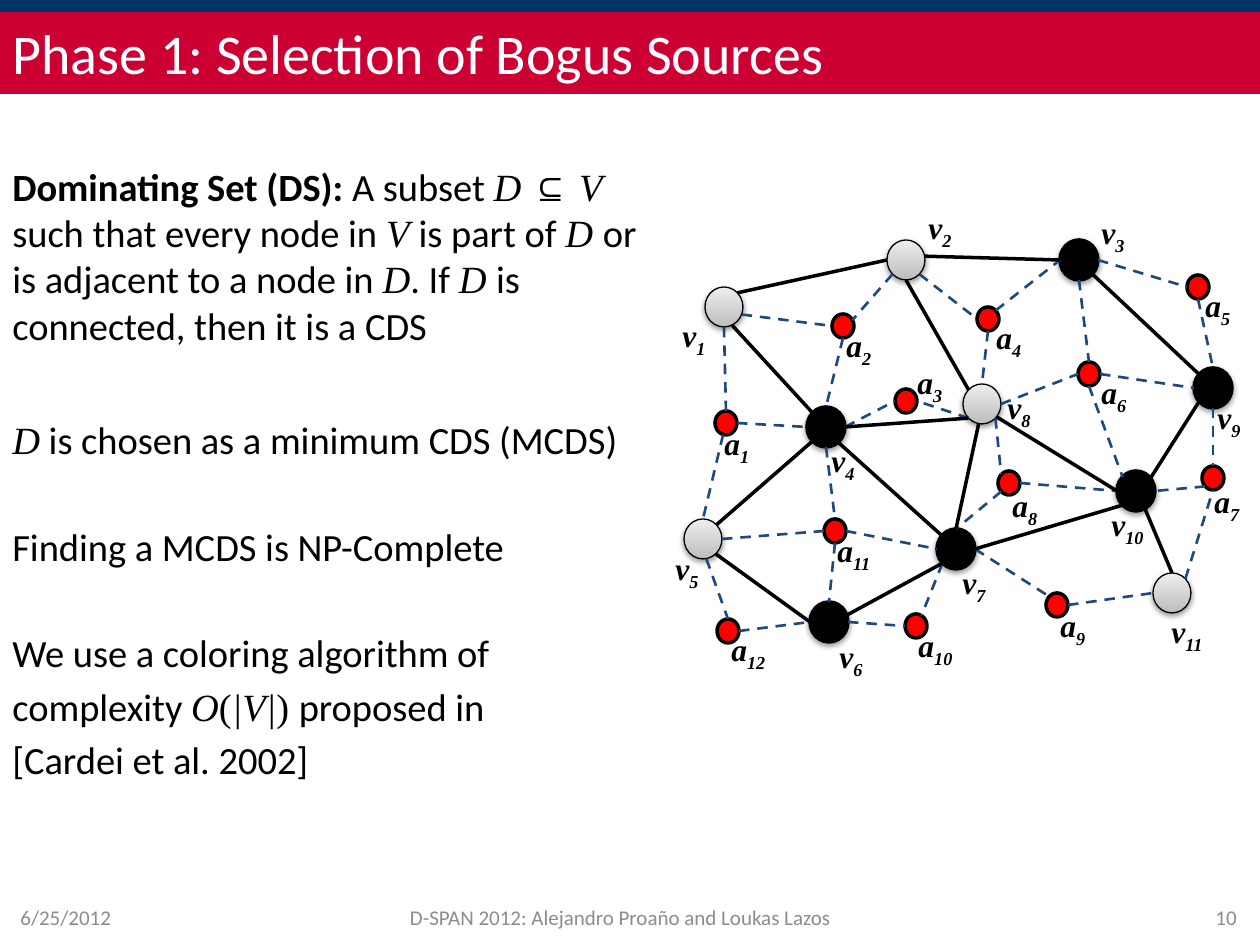
from math import cos, radians, sin

from lxml.etree import SubElement
from pptx import Presentation
from pptx.dml.color import RGBColor
from pptx.enum.dml import MSO_LINE
from pptx.enum.shapes import MSO_CONNECTOR, MSO_SHAPE
from pptx.enum.text import MSO_ANCHOR, MSO_AUTO_SIZE, PP_ALIGN
from pptx.oxml.ns import qn
from pptx.util import Emu, Pt

SCALE = 914400 / 126  # EMU in one px
COLORS = {"navy": "003366", "crimson": "CC0033", "white": "FFFFFF", "black": "000000",
          "footer": "8C8C8C", "red": "FF0000", "dash": "1F497D",
          "grey_low": "BDBDBD", "grey_high": "EEEEEE"}
SANS, SERIF = "Calibri", "Times New Roman"
RADII = {"v": (19, 20), "a": (11, 12)}

# Node: centre x, centre y, label left, label top
NODES = {
    "v1": (724, 307, 670, 310), "v2": (906, 260, 916, 202), "v3": (1079, 260, 1089, 207),
    "v4": (826, 427, 819, 435), "v5": (703, 539, 663, 543), "v6": (829, 622, 827, 631),
    "v7": (956, 549, 950, 557), "v8": (982, 404, 995, 382), "v9": (1213, 388, 1205, 392),
    "v10": (1136, 491, 1099, 499), "v11": (1172, 593, 1159, 606),
    "a1": (726, 423, 712, 418), "a2": (843, 326, 834, 320), "a3": (906, 401, 905, 357),
    "a4": (988, 319, 984, 312), "a5": (1198, 287, 1193, 280), "a6": (1089, 374, 1089, 367),
    "a7": (1213, 478, 1202, 476), "a8": (1009, 483, 1000, 480), "a9": (1057, 605, 1048, 600),
    "a10": (916, 626, 906, 620), "a11": (835, 531, 825, 525), "a12": (728, 631, 719, 624),
}
DOMINATING = {"v3", "v4", "v6", "v7", "v9", "v10"}

# Edge: node and clockwise angle on its rim, at both ends
SENSOR_EDGES = [
    ("a5", 90, "v9", 270), ("v3", 0, "a5", 180), ("a4", 90, "v8", 270), ("a8", 0, "v10", 180),
    ("a6", 0, "v9", 180), ("v3", 90, "a6", 270), ("a7", 135, "v10", 0), ("v9", 90, "a7", 270),
    ("v7", 135, "a10", 300), ("v6", 0, "a10", 180), ("v8", 0, "a6", 180), ("a4", 315, "v3", 180),
    ("v2", 45, "a4", 180), ("a9", 0, "v11", 180), ("v7", 0, "a9", 225), ("a2", 90, "v4", 270),
    ("v4", 0, "a3", 180), ("v8", 135, "a3", 0), ("a8", 135, "v7", 270), ("v8", 45, "a8", 225),
    ("a1", 0, "v4", 180), ("a1", 105, "v5", 270), ("v1", 90, "a1", 270), ("v2", 135, "a2", 330),
    ("v1", 22, "a2", 180), ("a11", 0, "v7", 180), ("a11", 90, "v6", 270), ("v5", 0, "a11", 180),
    ("v5", 80, "a12", 270), ("v4", 90, "a11", 270), ("a6", 90, "v10", 225), ("a12", 0, "v6", 180),
    ("v11", 315, "a7", 90),
]
BACKBONE_EDGES = [
    ("v1", 315, "v2", 180), ("v1", 65, "v4", 225), ("v5", 315, "v4", 135), ("v5", 48, "v6", 180),
    ("v2", 349, "v3", 180), ("v4", 0, "v8", 135), ("v2", 90, "v8", 225), ("v8", 40, "v10", 180),
    ("v6", 340, "v7", 135), ("v7", 0, "v10", 135), ("v10", 62, "v11", 270),
    ("v10", 320, "v9", 137), ("v3", 45, "v9", 223), ("v7", 270, "v8", 100),
    ("v4", 50, "v7", 222),
]

# Paragraph: space before in points, then runs of (text, style); b bold, m math, i italic
DEFINITIONS = [
    (0, [("Dominating Set (DS):", "b"), (" A subset ", ""), ("D ", "mi"), ("⊆", "m"),
         (" V ", "mi"), ("such that every node in ", ""), ("V ", "mi"), ("is part of ", ""),
         ("D ", "mi"), ("or is adjacent to a node in ", ""), ("D", "mi"), (". If ", ""),
         ("D ", "mi"), ("is connected, then it is a CDS", "")]),
    (39, [("D", "mi"), (" is chosen as a minimum CDS (MCDS)", "")]),
    (34.6, [("Finding a MCDS is NP-Complete", "")]),
    (34.6, [("We use a coloring algorithm of", "")]),
    (4, [("complexity ", ""), ("O", "mi"), ("(", "m"), ("|V|", "mi"), (") ", "m"),
         ("proposed in", "")]),
    (4, [("[Cardei et al. 2002]", "")]),
]


def px(value):
    return Emu(round(value * SCALE))


def rgb(name):
    return RGBColor.from_string(COLORS[name])


def rim(node, angle):
    """Point on the outline of a node."""
    x, y = NODES[node][:2]
    rx, ry = RADII[node[0]]
    return x + rx * cos(radians(angle)), y + ry * sin(radians(angle))


class SlideBuilder:
    def __init__(self, slide):
        self.slide = slide

    def title(self, text, box, fill):
        title = self.slide.shapes.title
        title.left, title.top, title.width, title.height = map(px, box)
        title.fill.solid()
        title.fill.fore_color.rgb = rgb(fill)
        frame = title.text_frame
        frame.auto_size = MSO_AUTO_SIZE.NONE
        frame.vertical_anchor = MSO_ANCHOR.MIDDLE
        frame.paragraphs[0].alignment = PP_ALIGN.LEFT
        self.run(frame.paragraphs[0], text, 32, color="white")

    def shape(self, kind, box, fill, line, width):
        shape = self.slide.shapes.add_shape(kind, *map(px, box))
        shape.shadow.inherit = False
        shape.line.color.rgb = rgb(line)
        shape.line.width = Pt(width)
        if fill:
            shape.fill.solid()
            shape.fill.fore_color.rgb = rgb(fill)
        else:
            shape.fill.gradient()
            shape.fill.gradient_angle = 90
            for stop, color in zip(shape.fill.gradient_stops, ("grey_low", "grey_high")):
                stop.color.rgb = rgb(color)
        return shape

    def node(self, name):
        x, y = NODES[name][:2]
        rx, ry = RADII[name[0]]
        fill = "red" if name[0] == "a" else "black" if name in DOMINATING else None
        ellipse = self.shape(MSO_SHAPE.OVAL, (x - rx, y - ry, 2 * rx, 2 * ry),
                             fill, "black", 2 if fill else 0.75)
        if name[0] == "v":
            effects = ellipse._element.spPr.find(qn("a:effectLst"))
            shadow = SubElement(effects, qn("a:outerShdw"), blurRad="39400", dist="20300",
                                dir="5400000", rotWithShape="0")
            color = SubElement(shadow, qn("a:srgbClr"), val=COLORS["black"])
            SubElement(color, qn("a:alpha"), val="38000")

    def edge(self, start, start_angle, end, end_angle, color, width, dashed=False):
        ends = rim(start, start_angle) + rim(end, end_angle)
        edge = self.slide.shapes.add_connector(MSO_CONNECTOR.STRAIGHT, *map(px, ends))
        edge.line.color.rgb = rgb(color)
        edge.line.width = Pt(width)
        if dashed:
            edge.line.dash_style = MSO_LINE.DASH
        SubElement(edge._element.spPr, qn("a:effectLst"))

    def text_box(self, box, wrap=True, anchor=MSO_ANCHOR.TOP):
        frame = self.slide.shapes.add_textbox(*map(px, box)).text_frame
        frame.word_wrap = wrap
        frame.vertical_anchor = anchor
        return frame

    def run(self, paragraph, text, size, font=SANS, color="black", bold=False, italic=False):
        run = paragraph.add_run()
        run.text = text
        run.font.size, run.font.name = Pt(size), font
        run.font.bold, run.font.italic = bold, italic
        run.font.color.rgb = rgb(color)
        return run

    def definitions(self, box, paragraphs):
        frame = self.text_box(box)
        frame.margin_top = px(60)
        for index, (space, runs) in enumerate(paragraphs):
            paragraph = frame.add_paragraph() if index else frame.paragraphs[0]
            paragraph.space_before = Pt(space)
            for text, style in runs:
                self.run(paragraph, text, 22, SERIF if "m" in style else SANS,
                         bold="b" in style, italic="i" in style)

    def label(self, name):
        left, top = NODES[name][2:]
        frame = self.text_box((left, top, 55 if len(name) == 2 else 65, 50), wrap=False)
        for text in (name[0], name[1:]):
            run = self.run(frame.paragraphs[0], text, 18, SERIF, bold=True, italic=True)
        run._r.get_or_add_rPr().set("baseline", "-25000")

    def footer(self, text, left, width, alignment):
        frame = self.text_box((left, 892, width, 50), anchor=MSO_ANCHOR.MIDDLE)
        frame.paragraphs[0].alignment = alignment
        self.run(frame.paragraphs[0], text, 12, color="footer")


def main():
    deck = Presentation()
    deck.slide_width, deck.slide_height = px(1260), px(945)
    builder = SlideBuilder(deck.slides.add_slide(deck.slide_layouts[5]))

    # Header and text
    builder.shape(MSO_SHAPE.RECTANGLE, (0, 0, 1260, 10), "navy", "navy", 2)
    builder.title("Phase 1: Selection of Bogus Sources", (0, 10, 1260, 84), "crimson")
    builder.definitions((0, 103, 656, 757), DEFINITIONS)

    # Footer
    builder.footer("6/25/2012", 8, 294, PP_ALIGN.LEFT)
    builder.footer("D-SPAN 2012: Alejandro Proaño and Loukas Lazos", 387, 467, PP_ALIGN.CENTER)
    builder.footer("10", 955, 294, PP_ALIGN.RIGHT)

    # Network graph
    for name in NODES:
        builder.node(name)
    for edge in SENSOR_EDGES:
        builder.edge(*edge, "dash", 1.5, dashed=True)
    for edge in BACKBONE_EDGES:
        builder.edge(*edge, "black", 2)
    for name in NODES:
        builder.label(name)

    deck.save("out.pptx")


if __name__ == "__main__":
    main()
